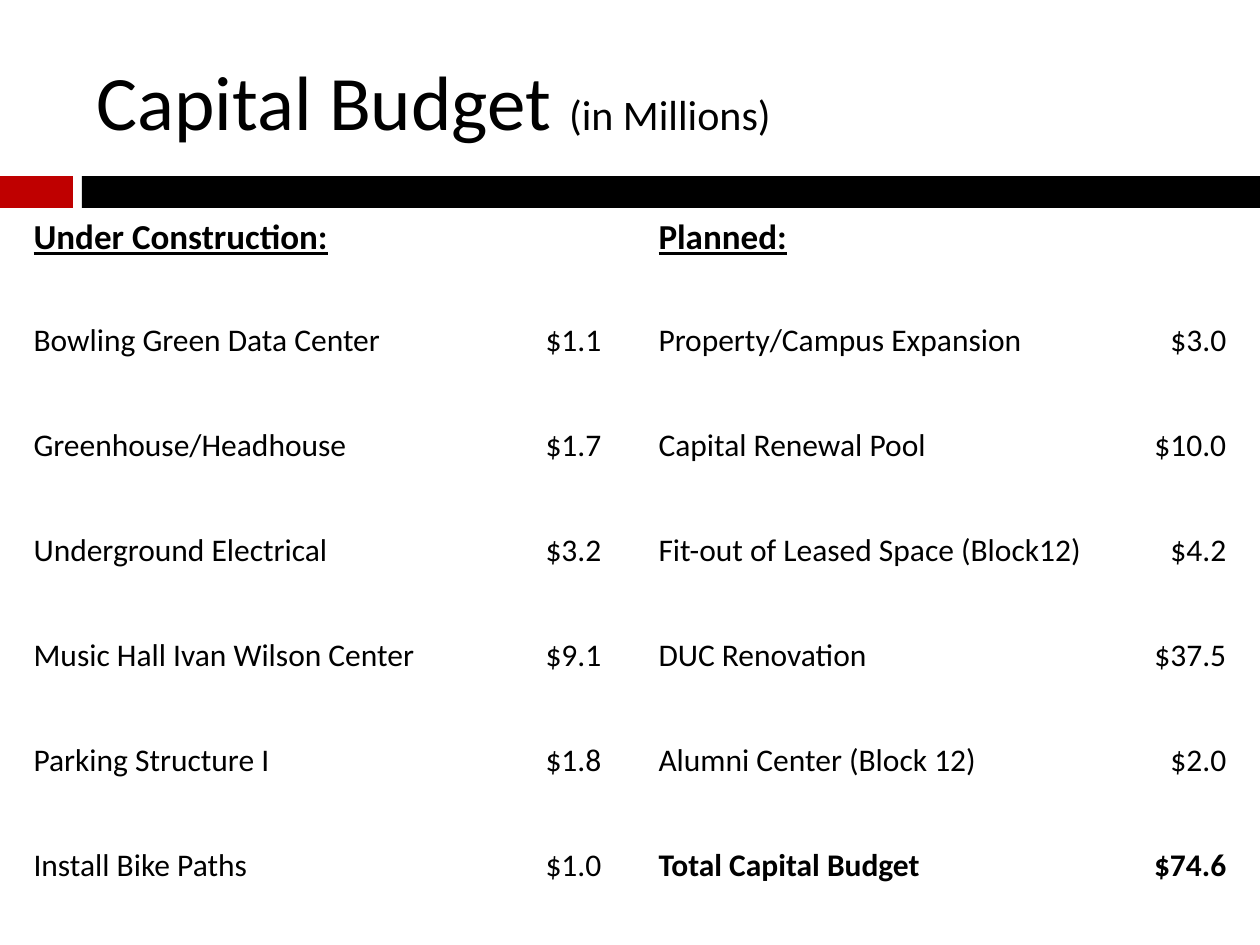
"""Build the capital budget slide."""
from dataclasses import dataclass

from pptx import Presentation
from pptx.dml.color import RGBColor
from pptx.enum.shapes import MSO_SHAPE
from pptx.enum.text import MSO_ANCHOR, PP_ALIGN
from pptx.util import Emu, Pt

RECTANGLE = MSO_SHAPE.RECTANGLE
MIDDLE = MSO_ANCHOR.MIDDLE
LEFT, RIGHT = PP_ALIGN.LEFT, PP_ALIGN.RIGHT
PX = 914400 / 126
BLANK = 6


@dataclass(frozen=True)
class Theme:
    font: str = "Calibri"
    ink: RGBColor = RGBColor(0x00, 0x00, 0x00)
    accent: RGBColor = RGBColor(0xBF, 0x00, 0x00)
    title: int = 44
    unit: int = 24
    heading: int = 20
    body: int = 18


THEME = Theme()
HEADING = {"size": Pt(THEME.heading), "bold": True, "underline": True}
BODY = {"size": Pt(THEME.body), "bold": False}
TOTAL = {"size": Pt(THEME.body), "bold": True}

TITLE = (
    ("Capital Budget ", {"size": Pt(THEME.title)}),
    ("(in Millions)", {"size": Pt(THEME.unit)}),
)
BARS = (
    ((0, 176, 73, 32), THEME.accent),
    ((82, 176, 1178, 32), THEME.ink),
)
TABLE_FRAME = (21, 210, 1218, 735)
COLUMN_WIDTHS = (452, 141, 32, 452, 141)
UNDER_CONSTRUCTION = (
    ("Under Construction:", "", HEADING),
    ("Bowling Green Data Center", "$1.1", BODY),
    ("Greenhouse/Headhouse", "$1.7", BODY),
    ("Underground Electrical", "$3.2", BODY),
    ("Music Hall Ivan Wilson Center", "$9.1", BODY),
    ("Parking Structure I", "$1.8", BODY),
    ("Install Bike Paths", "$1.0", BODY),
)
PLANNED = (
    ("Planned:", "", HEADING),
    ("Property/Campus Expansion", "$3.0", BODY),
    ("Capital Renewal Pool", "$10.0", BODY),
    ("Fit-out of Leased Space (Block12)", "$4.2", BODY),
    ("DUC Renovation", "$37.5", BODY),
    ("Alumni Center (Block 12)", "$2.0", BODY),
    ("Total Capital Budget", "$74.6", TOTAL),
)


def px(length):
    """Turn pixels into EMU."""
    return Emu(round(length * PX))


def add_span(para, text, formats):
    """Add one run with the theme font and the given format values."""
    span = para.add_run()
    span.text = text
    span.font.color.rgb = THEME.ink
    for name, value in {"name": THEME.font, **formats}.items():
        setattr(span.font, name, value)


def add_bar(page, frame, colour):
    """Add a plain filled rectangle."""
    bar = page.shapes.add_shape(RECTANGLE, *map(px, frame))
    bar.shadow.inherit = False
    bar.fill.solid()
    bar.fill.fore_color.rgb = colour
    bar.line.fill.background()


def add_title(page, frame, spans):
    """Add the title as a vertically centred text box."""
    box = page.shapes.add_textbox(*map(px, frame))
    box.text_frame.word_wrap = True
    box.text_frame.vertical_anchor = MIDDLE
    for text, formats in spans:
        add_span(box.text_frame.paragraphs[0], text, formats)


def fill_cell(cell, text, align, formats):
    """Write one aligned table cell."""
    if text:
        para = cell.text_frame.paragraphs[0]
        para.alignment = align
        add_span(para, text, formats)


def add_budget(page, frame, widths, groups):
    """Add a table with groups of names and amounts side by side."""
    rows = len(groups[0])
    table = page.shapes.add_table(rows, len(widths), *map(px, frame)).table
    table.first_row = table.horz_banding = False
    for column, width in zip(table.columns, widths):
        column.width = px(width)
    for cell in table.iter_cells():
        cell.fill.background()
    for group_index, group in enumerate(groups):
        first = 3 * group_index
        for row, (name, amount, formats) in enumerate(group):
            fill_cell(table.cell(row, first), name, LEFT, formats)
            fill_cell(table.cell(row, first + 1), amount, RIGHT, formats)


def main():
    """Build and save the deck."""
    deck = Presentation()
    deck.slide_width, deck.slide_height = px(1260), px(945)
    page = deck.slides.add_slide(deck.slide_layouts[BLANK])
    for frame, colour in BARS:
        add_bar(page, frame, colour)
    add_title(page, (84, 32, 1124, 136), TITLE)
    add_budget(page, TABLE_FRAME, COLUMN_WIDTHS, (UNDER_CONSTRUCTION, PLANNED))
    deck.save("out.pptx")


if __name__ == "__main__":
    main()
